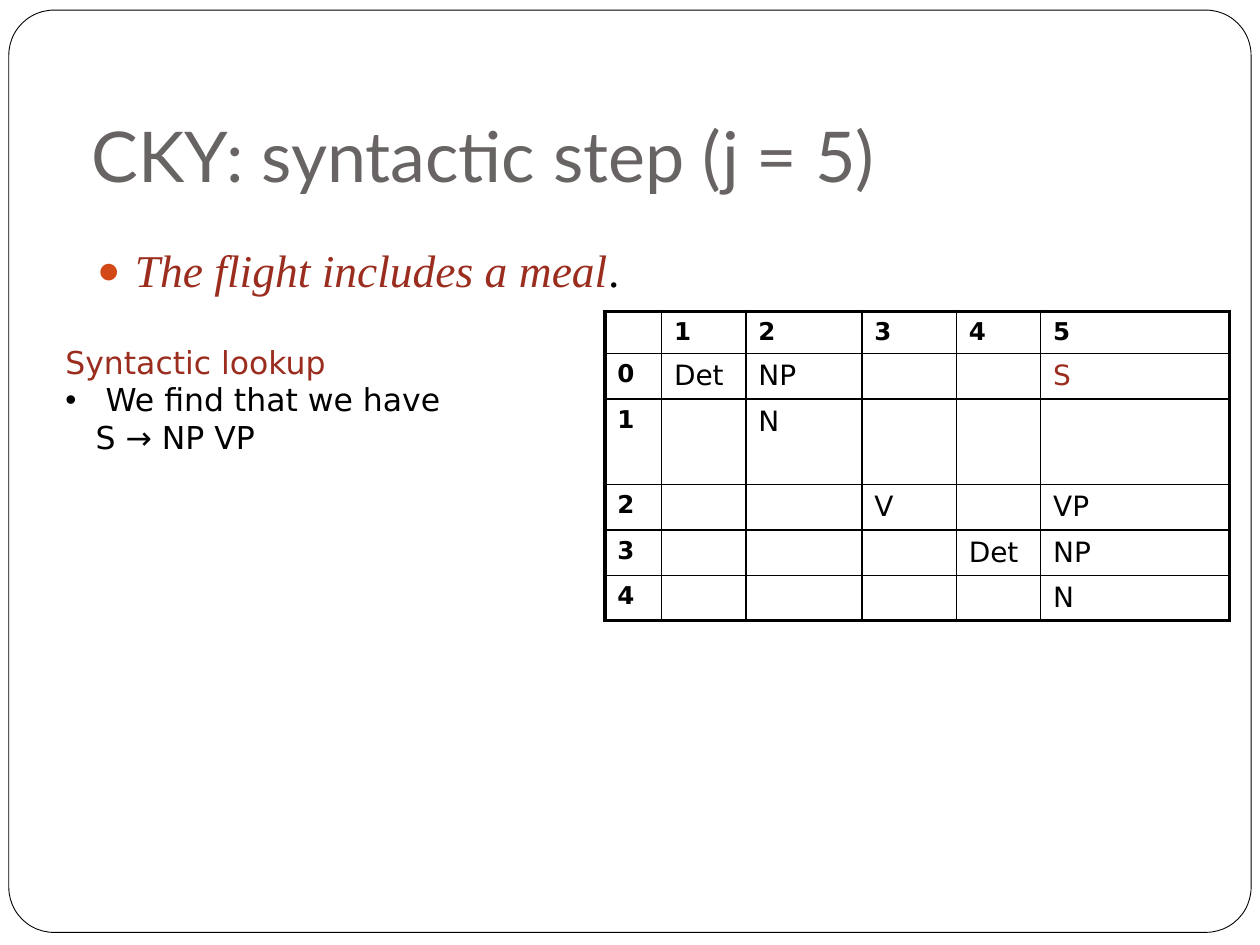
"""Build a slide showing the last syntactic step of a CKY parse."""
from lxml import etree
from pptx import Presentation
from pptx.dml.color import RGBColor
from pptx.enum.shapes import MSO_SHAPE
from pptx.enum.text import MSO_ANCHOR, MSO_AUTO_SIZE, PP_ALIGN
from pptx.oxml.ns import qn
from pptx.util import Inches, Pt

ROUNDED = MSO_SHAPE.ROUNDED_RECTANGLE
TOP, BOTTOM = MSO_ANCHOR.TOP, MSO_ANCHOR.BOTTOM
NO_AUTOFIT = MSO_AUTO_SIZE.NONE
LEFT = PP_ALIGN.LEFT
BLACK = RGBColor(0x00, 0x00, 0x00)
WHITE = RGBColor(0xFF, 0xFF, 0xFF)
GRAY = RGBColor(0x69, 0x64, 0x64)
RED = RGBColor(0x9B, 0x2D, 0x1F)
ORANGE = RGBColor(0xD3, 0x48, 0x17)
SANS = "DejaVu Sans"


def style(r, size, color, name=SANS, bold=False, italic=False):
    r.font.size = Pt(size)
    r.font.name = name
    r.font.color.rgb = color
    r.font.bold = bold
    r.font.italic = italic


def set_bullet(p, char, color, percent, indent):
    pPr = p._p.get_or_add_pPr()
    pPr.set("marL", str(Inches(indent)))
    pPr.set("indent", str(-Inches(indent)))
    clr = etree.SubElement(pPr, qn("a:buClr"))
    etree.SubElement(clr, qn("a:srgbClr"), val=str(color))
    etree.SubElement(pPr, qn("a:buSzPct"), val=str(percent * 1000))
    etree.SubElement(pPr, qn("a:buFont"), typeface="Arial")
    etree.SubElement(pPr, qn("a:buChar"), char=char)


prs = Presentation()
prs.slide_width, prs.slide_height = Inches(10), Inches(7.5)
s = prs.slides.add_slide(prs.slide_layouts[1])

frame = s.shapes.add_shape(ROUNDED, Inches(0.07), Inches(0.08), Inches(9.86), Inches(7.32))
frame.adjustments[0] = 0.049
frame.shadow.inherit = False
frame.fill.solid()
frame.fill.fore_color.rgb = WHITE
frame.line.color.rgb = BLACK
frame.line.width = Pt(0.5)
s.shapes._spTree.insert(2, frame._element)

title = s.shapes.title
title.left, title.top, title.width, title.height = Inches(0.63), Inches(0.33), Inches(8.75), Inches(1.33)
tf = title.text_frame
tf.text = "CKY: syntactic step (j = 5)"
tf.auto_size = NO_AUTOFIT
tf.vertical_anchor = BOTTOM
tf.margin_bottom = Inches(0.1)
tf.paragraphs[0].alignment = LEFT
style(tf.paragraphs[0].runs[0], 40, GRAY, "Lato")

body = s.placeholders[1]
body.left, body.top, body.width, body.height = Inches(0.67), Inches(1.92), Inches(8.75), Inches(0.5)
tf = body.text_frame
tf.auto_size = NO_AUTOFIT
tf.vertical_anchor = TOP
p = tf.paragraphs[0]
p.line_spacing = 0.9
p.space_before = Pt(5.8)
set_bullet(p, "●", ORANGE, 85, 0.3)
for text, color, italic in [("The flight includes a meal", RED, True), (".", BLACK, False)]:
    r = p.add_run()
    r.text = text
    style(r, 26, color, "Times New Roman", italic=italic)

chart_rows = [
    ["", "1", "2", "3", "4", "5"],
    ["0", "Det", "NP", "", "", "S"],
    ["1", "", "N", "", "", ""],
    ["2", "", "", "V", "", "VP"],
    ["3", "", "", "", "Det", "NP"],
    ["4", "", "", "", "", "N"],
]
col_widths = [0.45, 0.67, 0.92, 0.75, 0.67, 1.5]
row_heights = [0.33, 0.36, 0.68, 0.36, 0.36, 0.36]
last = len(chart_rows) - 1
table = s.shapes.add_table(6, 6, Inches(4.8), Inches(2.47), Inches(sum(col_widths)),
                           Inches(sum(row_heights))).table
table.first_row = table.horz_banding = False
for column, width in zip(table.columns, col_widths):
    column.width = Inches(width)
for row, height in zip(table.rows, row_heights):
    row.height = Inches(height)

for i, words in enumerate(chart_rows):
    for j, word in enumerate(words):
        cell = table.cell(i, j)
        p = cell.text_frame.paragraphs[0]
        if word:
            p.text = word
            header = i == 0 or j == 0
            style(p.runs[0], 14 if header else 16, RED if word == "S" else BLACK, bold=header)
        else:
            etree.SubElement(p._p, qn("a:endParaRPr"), sz="1400")
        tcPr = cell._tc.get_or_add_tcPr()
        outer_sides = {"lnL": j == 0, "lnR": j == last, "lnT": i == 0, "lnB": i == last}
        for side, outer in outer_sides.items():
            ln = etree.SubElement(tcPr, qn("a:" + side), w=str(Pt(2.25 if outer else 1)))
            fill = etree.SubElement(ln, qn("a:solidFill"))
            etree.SubElement(fill, qn("a:srgbClr"), val=str(BLACK))
        cell.fill.background()

lookup = s.shapes.add_textbox(Inches(0.42), Inches(2.67), Inches(3.25), Inches(1.92))
tf = lookup.text_frame
tf.word_wrap = True
tf.text = "Syntactic lookup"
style(tf.paragraphs[0].runs[0], 18, RED)
p = tf.add_paragraph()
p.text = " We find that we have S → NP VP"
style(p.runs[0], 18, BLACK)
set_bullet(p, "•", BLACK, 100, 0.24)

prs.save("out.pptx")
